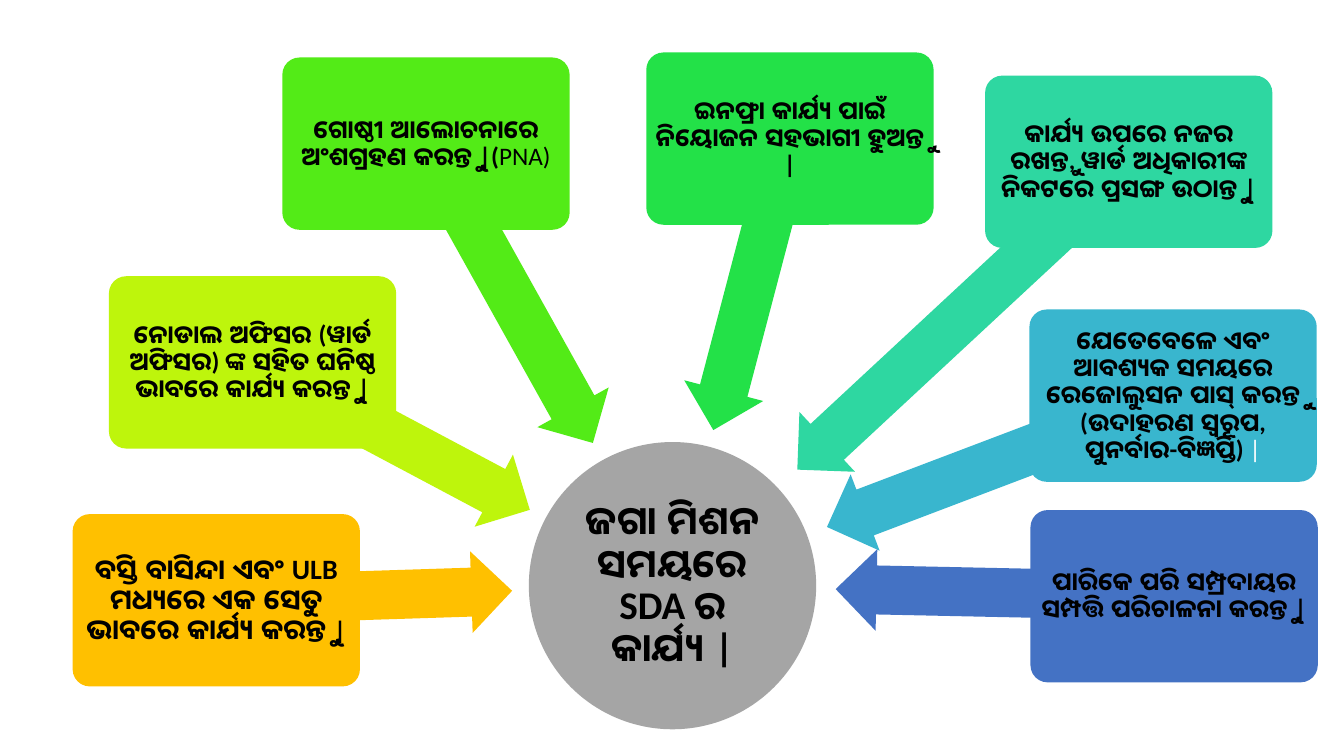
import math
from pptx import Presentation
from pptx import util as u
from pptx.dml import color
from pptx.enum import shapes, text

HUB_X, HUB_Y, HUB_SIZE = 6.67, 5.81, 2.85
BOX_WIDTH, BOX_HEIGHT, ARROW_HEIGHT = 2.85, 1.71, 0.81


def add_filled(kind, center_x, center_y, width, height, fill, adjustments=()):
    shape = page.shapes.add_shape(
        kind, u.Inches(center_x - width / 2), u.Inches(center_y - height / 2),
        u.Inches(width), u.Inches(height))
    shape.shadow.inherit = False
    shape.fill.solid()
    shape.fill.fore_color.rgb = color.RGBColor.from_string(fill)
    shape.line.fill.background()
    for index, value in enumerate(adjustments):
        shape.adjustments[index] = value
    return shape


def write(shape, content, size=18, bold=True, ink="000000", margin=0.04):
    frame = shape.text_frame
    frame.word_wrap = True
    frame.vertical_anchor = text.MSO_ANCHOR.MIDDLE
    frame.margin_left = frame.margin_right = u.Inches(margin)
    frame.margin_top = frame.margin_bottom = u.Inches(margin)
    para = frame.paragraphs[0]
    para.alignment = text.PP_ALIGN.CENTER
    para.line_spacing = 0.9
    span = para.add_run()
    span.text = content
    span.font.name = "Calibri"
    span.font.size = u.Pt(size)
    span.font.bold = bold
    span.font.color.rgb = color.RGBColor.from_string(ink)


deck = Presentation()
deck.slide_width = u.Inches(13.33)
deck.slide_height = u.Inches(7.5)
page = deck.slides.add_slide(deck.slide_layouts[6])

hub = add_filled(shapes.MSO_SHAPE.OVAL, HUB_X, HUB_Y, HUB_SIZE, HUB_SIZE, "A5A5A5")
write(hub, "ଜଗା ମିଶନ ସମୟରେ SDA ର କାର୍ଯ୍ୟ |", size=28, margin=0.02)

roles = [
    (0.72, 5.1, "FFC000", [
        ("ବସ୍ତି ବାସିନ୍ଦା ଏବଂ ULB ମଧ୍ୟରେ ଏକ ସେତୁ ଭାବରେ କାର୍ଯ୍ୟ କରନ୍ତୁ ", {"size": 20}),
        ("|", {})]),
    (1.08, 2.74, "BEF50C", [
        ("ନୋଡାଲ ଅଫିସର (ୱାର୍ଡ ଅଫିସର) ଙ୍କ ସହିତ ଘନିଷ୍ଠ ଭାବରେ କାର୍ଯ୍ୟ କରନ୍ତୁ |", {})]),
    (2.8, 0.57, "53EB17", [
        ("ଗୋଷ୍ଠୀ ଆଲୋଚନାରେ ଅଂଶଗ୍ରହଣ କରନ୍ତୁ |(", {}),
        ("PNA)", {"bold": False})]),
    (6.41, 0.52, "23E148", [
        ("ଇନଫ୍ରା କାର୍ଯ୍ୟ ପାଇଁ ନିୟୋଜନ ସହଭାଗୀ ହୁଅନ୍ତୁ |", {})]),
    (9.77, 0.75, "2ED7A1", [
        ("କାର୍ଯ୍ୟ ଉପରେ ନଜର ରଖନ୍ତୁ, ୱାର୍ଡ ଅଧିକାରୀଙ୍କ ନିକଟରେ ପ୍ରସଙ୍ଗ ଉଠାନ୍ତୁ |", {})]),
    (10.21, 3.07, "39B6CE", [
        ("ଯେତେବେଳେ ଏବଂ ଆବଶ୍ୟକ ସମୟରେ ରେଜୋଲୁସନ ପାସ୍ କରନ୍ତୁ "
         "(ଉଦାହରଣ ସ୍ୱରୂପ, ପୁନର୍ବାର-ବିଜ୍ଞପ୍ତି) ", {}),
        ("|", {"bold": False, "ink": "FFFFFF"})]),
    (10.22, 5.06, "4472C4", [
        ("ପାରିକେ ପରି ସମ୍ପ୍ରଦାୟର ସମ୍ପତ୍ତି ପରିଚାଳନା କରନ୍ତୁ |", {})]),
]

for left, top, fill, spans in roles:
    box_x, box_y = left + BOX_WIDTH / 2, top + BOX_HEIGHT / 2
    distance = math.hypot(box_x - HUB_X, box_y - HUB_Y)
    angle = math.atan2(box_y - HUB_Y, box_x - HUB_X)
    length = 0.94 * distance - 1.32
    arrow = add_filled(
        shapes.MSO_SHAPE.LEFT_ARROW,
        box_x - length / 2 * math.cos(angle), box_y - length / 2 * math.sin(angle),
        length, ARROW_HEIGHT, fill, (0.6, 0.5))
    arrow.rotation = math.degrees(angle) % 360
    box = add_filled(shapes.MSO_SHAPE.ROUNDED_RECTANGLE, box_x, box_y,
                     BOX_WIDTH, BOX_HEIGHT, fill, (0.1,))
    for content, style in spans:
        write(box, content, **style)

deck.save("out.pptx")
